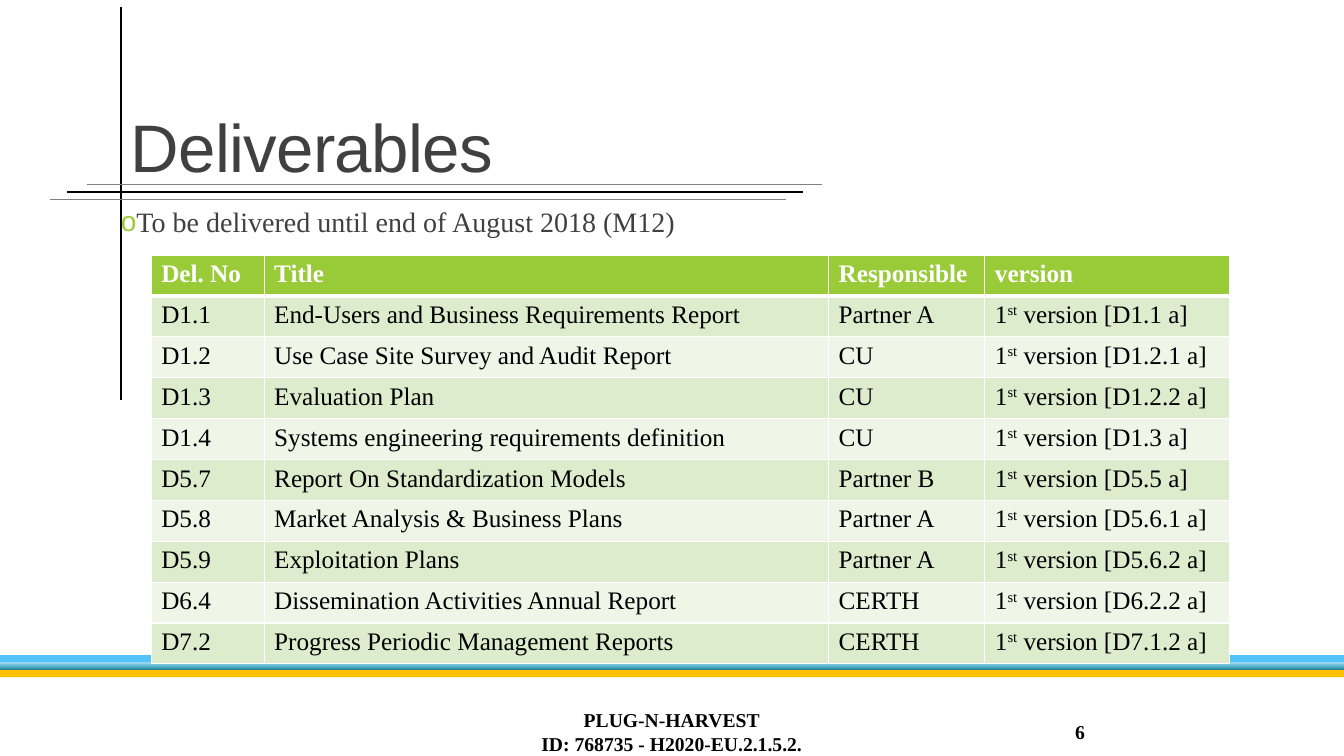
from copy import deepcopy
from dataclasses import dataclass

from lxml.etree import SubElement
from pptx import Presentation
from pptx.dml.color import RGBColor
from pptx.enum.shapes import MSO_CONNECTOR as Connector, MSO_SHAPE as Shape
from pptx.enum.text import MSO_ANCHOR as Anchor, PP_ALIGN as Align
from pptx.oxml.ns import qn
from pptx.util import Pt

SERIF, SANS = "Times New Roman", "Arial"
BLACK, WHITE, DARK, GREY, GREEN = "000000", "FFFFFF", "404040", "808080", "99CB38"
BANDS = ("DEECCE", "EFF6E8")


@dataclass
class Stripe:
    top: float
    colors: tuple[str, ...]


@dataclass
class Rule:
    start: tuple[float, float]
    end: tuple[float, float]
    color: str
    width: float


@dataclass
class Label:
    lines: tuple[str, ...]
    area: tuple[float, float, float, float]
    font: dict
    anchor: Anchor = Anchor.TOP
    align: Align = Align.LEFT
    leading: float = 1.0
    side_inset: float = 7.2
    tracking: int = 0
    bullet: str = ""


@dataclass
class Deliverable:
    number: str
    title: str
    responsible: str
    version: str


STRIPE_HEIGHT = 5.25
STRIPES = (
    Stripe(478.5, ("FFC000",)),
    Stripe(473.25, ("297E96", "53B5D0", "95D1E2")),
    Stripe(468, ("51C3F9",)),
)
RULES = (
    Rule((48.2, 137.2), (573.8, 137.2), BLACK, 1),
    Rule((86.4, 5), (86.4, 285.8), BLACK, 1),
    Rule((62, 131.8), (587.5, 131.8), GREY, 0.5),
    Rule((36, 142.5), (561.6, 142.5), GREY, 0.5),
)
FOOTER_FONT = dict(name=SERIF, size=Pt(14), bold=True)
LABELS = (
    Label(("To be delivered until end of August 2018 (M12)",), (86.4, 145.4, 792, 316.8),
          dict(name=SERIF, size=Pt(20), color=DARK), leading=0.9, side_inset=0, bullet="o"),
    Label(("Deliverables",), (86.4, 22.3, 792, 114.5),
          dict(name=SANS, size=Pt(48), color=DARK), Anchor.BOTTOM, leading=0.85, tracking=-50),
    Label(("PLUG-N-HARVEST", "ID: 768735 - H2020-EU.2.1.5.2."), (290.2, 508.3, 379.4, 28.8),
          FOOTER_FONT, Anchor.MIDDLE, Align.CENTER),
    Label(("6",), (679, 508.3, 103, 28.8), FOOTER_FONT, Anchor.MIDDLE, Align.RIGHT),
)
HEADINGS = ("Del. No", "Title", "Responsible", "version")
COLUMN_WIDTHS = (80.7, 403.2, 111.6, 175)
ROW_HEIGHT = 29.2
DELIVERABLES = (
    Deliverable("D1.1", "End-Users and Business Requirements Report", "Partner A", "D1.1 a"),
    Deliverable("D1.2", "Use Case Site Survey and Audit Report", "CU", "D1.2.1 a"),
    Deliverable("D1.3", "Evaluation Plan", "CU", "D1.2.2 a"),
    Deliverable("D1.4", "Systems engineering requirements definition", "CU", "D1.3 a"),
    Deliverable("D5.7", "Report On Standardization Models", "Partner B", "D5.5 a"),
    Deliverable("D5.8", "Market Analysis & Business Plans", "Partner A", "D5.6.1 a"),
    Deliverable("D5.9", "Exploitation Plans", "Partner A", "D5.6.2 a"),
    Deliverable("D6.4", "Dissemination Activities Annual Report", "CERTH", "D6.2.2 a"),
    Deliverable("D7.2", "Progress Periodic Management Reports", "CERTH", "D7.1.2 a"),
)


def paint(target, color: str) -> None:
    """Set a solid colour on a fill or a plain colour on a colour format."""
    if hasattr(target, "solid"):
        target.solid()
        target = target.fore_color
    target.rgb = RGBColor.from_string(color)


def add_span(para, text: str, font: dict):
    span = para.add_run()
    span.text = text
    for key, value in font.items():
        if key != "color":
            setattr(span.font, key, value)
    paint(span.font.fill, font.get("color", BLACK))
    return span


def draw_stripe(page, stripe: Stripe, width: int) -> None:
    bar = page.shapes.add_shape(Shape.RECTANGLE, 0, Pt(stripe.top), width, Pt(STRIPE_HEIGHT))
    bar.shadow.inherit = False
    bar.line.fill.background()
    if len(stripe.colors) == 1:
        paint(bar.fill, stripe.colors[0])
        return
    bar.fill.gradient()
    bar.fill.gradient_angle = 90
    stops = bar.element.xpath(".//a:gsLst")[0]
    stops.insert(1, deepcopy(stops[0]))
    for stop, color, position in zip(bar.fill.gradient_stops, stripe.colors, (0, 0.48, 1)):
        paint(stop.color, color)
        stop.position = position


def draw_rule(page, rule: Rule) -> None:
    points = [Pt(value) for value in (*rule.start, *rule.end)]
    line = page.shapes.add_connector(Connector.STRAIGHT, *points)
    paint(line.line.fill, rule.color)
    line.line.width = Pt(rule.width)
    SubElement(line.element.spPr, qn("a:effectLst"))


def draw_label(page, label: Label) -> None:
    box = page.shapes.add_textbox(*[Pt(value) for value in label.area])
    frame = box.text_frame
    settings = dict(word_wrap=True, vertical_anchor=label.anchor,
                    margin_left=Pt(label.side_inset), margin_right=Pt(label.side_inset))
    for key, value in settings.items():
        setattr(frame, key, value)
    para = frame.paragraphs[0]
    para.alignment = label.align
    para.line_spacing = label.leading
    if label.bullet:
        add_bullet(para, label.bullet)
    for index, text in enumerate(label.lines):
        if index:
            para.add_line_break()
        span = add_span(para, text, label.font)
        if label.tracking:
            span.font._element.set("spc", str(label.tracking))


def add_bullet(para, symbol: str) -> None:
    properties = para._p.get_or_add_pPr()
    properties.set("marL", str(Pt(7.2)))
    properties.set("indent", str(-Pt(7.2)))
    SubElement(SubElement(properties, qn("a:buClr")), qn("a:srgbClr"), val=GREEN)
    SubElement(properties, qn("a:buFont"), typeface=SANS)
    SubElement(properties, qn("a:buChar"), char=symbol)


def style_cell(cell, row: int) -> None:
    widths = dict(lnL=1, lnR=1, lnT=3 if row == 1 else 1, lnB=3 if row == 0 else 1)
    properties = cell._tc.get_or_add_tcPr()
    for side, width in widths.items():
        border = SubElement(properties, qn(f"a:{side}"), w=str(Pt(width)))
        SubElement(SubElement(border, qn("a:solidFill")), qn("a:srgbClr"), val=WHITE)
    paint(cell.fill, BANDS[(row - 1) % 2] if row else GREEN)


def draw_table(page) -> None:
    rows = [HEADINGS] + [(item.number, item.title, item.responsible, item.version)
                         for item in DELIVERABLES]
    table = page.shapes.add_table(len(rows), len(HEADINGS), Pt(108), Pt(182.2),
                                  Pt(sum(COLUMN_WIDTHS)), Pt(ROW_HEIGHT * len(rows))).table
    for column, width in zip(table.columns, COLUMN_WIDTHS):
        column.width = Pt(width)
    for row, values in enumerate(rows):
        table.rows[row].height = Pt(ROW_HEIGHT)
        font = dict(name=SERIF, size=Pt(18), bold=row == 0, color=BLACK if row else WHITE)
        for column, text in enumerate(values):
            cell = table.cell(row, column)
            style_cell(cell, row)
            para = cell.text_frame.paragraphs[0]
            if row and column == len(HEADINGS) - 1:
                add_span(para, "1", font)
                add_span(para, "st", font).font._element.set("baseline", "30000")
                text = f" version [{text}]"
            add_span(para, text, font)


def main() -> None:
    deck = Presentation()
    deck.slide_width, deck.slide_height = Pt(960), Pt(540)
    page = deck.slides.add_slide(deck.slide_layouts[6])
    # Bottom stripes and title rules
    for stripe in STRIPES:
        draw_stripe(page, stripe, deck.slide_width)
    for rule in RULES:
        draw_rule(page, rule)
    # Title, lead line and footer
    for label in LABELS:
        draw_label(page, label)
    # Deliverables table
    draw_table(page)
    deck.save("out.pptx")


if __name__ == "__main__":
    main()
